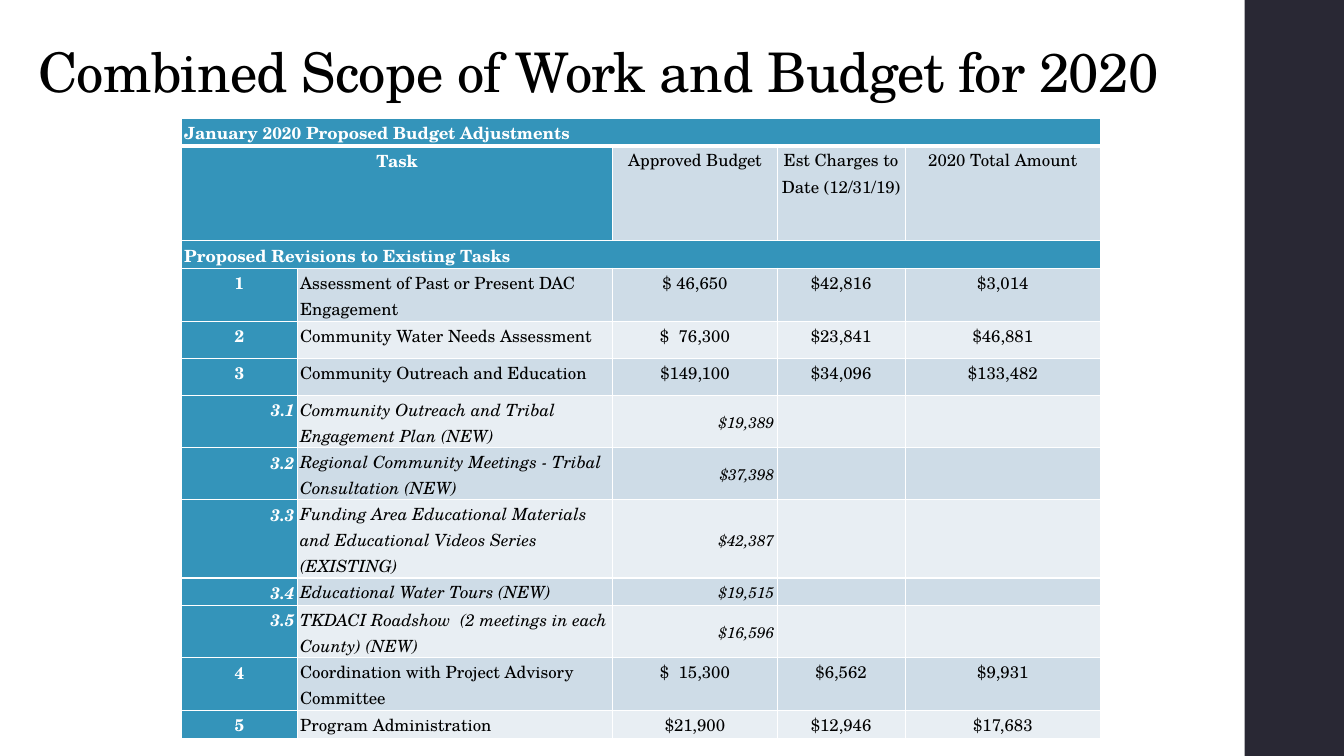
from lxml import etree
from pptx import Presentation
from pptx.dml.color import RGBColor
from pptx.enum.shapes import MSO_SHAPE
from pptx.enum.text import MSO_ANCHOR, PP_ALIGN
from pptx.oxml.ns import qn
from pptx.util import Pt

LEFT, CENTER, RIGHT, JUSTIFY = PP_ALIGN.LEFT, PP_ALIGN.CENTER, PP_ALIGN.RIGHT, PP_ALIGN.JUSTIFY
TOP, MIDDLE = MSO_ANCHOR.TOP, MSO_ANCHOR.MIDDLE
TITLE_ONLY = 5
FONT = "TeX Gyre Schola"
TEAL, BAND_DARK, BAND_LIGHT = "3494BA", "CEDCE7", "E8EEF3"
WHITE, BLACK, SIDEBAR = "FFFFFF", "000000", "292834"

COLUMN_WIDTHS = [82.8, 225.36, 117.36, 91.44, 139.68]
ROW_HEIGHTS = [13, 67.7, 13, 26.6, 26.6, 26.6, 23, 23, 34.6, 11.5, 23, 26.6, 13]
BUDGET = [
    ["January 2020 Proposed Budget Adjustments"],
    ["Task", "", "Approved Budget", "Est Charges to Date (12/31/19)", "2020 Total Amount"],
    ["Proposed Revisions to Existing Tasks"],
    ["1", "Assessment of Past or Present DAC Engagement", "$ 46,650", "$42,816", "$3,014"],
    ["2", "Community Water Needs Assessment", "$  76,300", "$23,841", "$46,881"],
    ["3", "Community Outreach and Education", "$149,100", "$34,096", "$133,482"],
    ["3.1", "Community Outreach and Tribal Engagement Plan (NEW)", "$19,389", "", ""],
    ["3.2", "Regional Community Meetings - Tribal Consultation (NEW)", "$37,398", "", ""],
    ["3.3", "Funding Area Educational Materials and Educational Videos Series (EXISTING)",
     "$42,387", "", ""],
    ["3.4", "Educational Water Tours (NEW)", "$19,515", "", ""],
    ["3.5", "TKDACI Roadshow  (2 meetings in each County) (NEW)", "$16,596", "", ""],
    ["4", "Coordination with Project Advisory Committee", "$  15,300", "$6,562", "$9,931"],
    ["5", "Program Administration", "$21,900", "$12,946", "$17,683"],
]


def rgb(hex_code):
    return RGBColor.from_string(hex_code)


def add_border(cell, side, width):
    """Draw a white line on one side (L, R, T or B) of a cell, before its fill is set."""
    line = etree.SubElement(cell._tc.get_or_add_tcPr(), qn(f"a:ln{side}"), w=str(Pt(width)))
    fill = etree.SubElement(line, qn("a:solidFill"))
    etree.SubElement(fill, qn("a:srgbClr"), val=WHITE)


prs = Presentation()
prs.slide_width, prs.slide_height = Pt(960), Pt(540)
slide = prs.slides.add_slide(prs.slide_layouts[TITLE_ONLY])

sidebar = slide.shapes.add_shape(MSO_SHAPE.RECTANGLE, Pt(889), Pt(0), Pt(71), Pt(540))
sidebar.shadow.inherit = False
sidebar.fill.solid()
sidebar.fill.fore_color.rgb = rgb(SIDEBAR)
sidebar.line.fill.background()

# Title
title = slide.shapes.title
title.left, title.top, title.width, title.height = Pt(20), Pt(23), Pt(837.5), Pt(61)
title.text_frame.text = "Combined Scope of Work and Budget for 2020"
title.text_frame.vertical_anchor = MIDDLE
heading = title.text_frame.paragraphs[0]
heading.alignment, heading.line_spacing = LEFT, 0.9
heading_font = heading.runs[0].font
heading_font.name, heading_font.size = FONT, Pt(39)
heading_font.color.rgb = rgb(BLACK)
heading.runs[0]._r.get_or_add_rPr().set("spc", "-50")

# Budget table
budget_table = slide.shapes.add_table(
    len(ROW_HEIGHTS), len(COLUMN_WIDTHS), Pt(129.6), Pt(84.4),
    Pt(sum(COLUMN_WIDTHS)), Pt(sum(ROW_HEIGHTS))).table
for column, width in zip(budget_table.columns, COLUMN_WIDTHS):
    column.width = Pt(width)
for row, height in zip(budget_table.rows, ROW_HEIGHTS):
    row.height = Pt(height)
for row, last_column in [(0, 4), (1, 1), (2, 4)]:
    budget_table.cell(row, 0).merge(budget_table.cell(row, last_column))

for r, entries in enumerate(BUDGET):
    is_section = len(entries) == 1
    is_subtask = "." in entries[0]
    for c in range(len(COLUMN_WIDTHS)):
        cell = budget_table.cell(r, c)
        entry = entries[c] if c < len(entries) else ""
        is_label = c == 0 or is_section
        is_sub_amount = is_subtask and c >= 2

        for side in "LRTB":
            if (r, side) != (1, "T"):
                add_border(cell, side, 3 if (r, side) == (0, "B") else 1)
        cell.fill.solid()
        band = BAND_DARK if r % 2 else BAND_LIGHT
        cell.fill.fore_color.rgb = rgb(TEAL if is_label else band)

        if is_section:
            alignment = JUSTIFY
        elif is_subtask and c != 1:
            alignment = RIGHT
        else:
            alignment = LEFT if c == 1 else CENTER
        cell_format = {
            "margin_left": Pt(2), "margin_right": Pt(2), "margin_top": 0, "margin_bottom": 0,
            "vertical_anchor": MIDDLE if is_sub_amount else TOP,
        }
        for attribute, value in cell_format.items():
            setattr(cell, attribute, value)

        paragraph = cell.text_frame.paragraphs[0]
        paragraph.alignment, paragraph.line_spacing = alignment, 1.07
        if not entry:
            paragraph._p.get_or_add_endParaRPr().set("sz", "1100")
            continue
        run = paragraph.add_run()
        run.text = entry
        font_format = {"name": FONT, "size": Pt(11 if is_sub_amount else 12),
                       "bold": is_label, "italic": is_subtask}
        for attribute, value in font_format.items():
            setattr(run.font, attribute, value)
        run.font.color.rgb = rgb(WHITE if is_label else BLACK)

prs.save("out.pptx")
